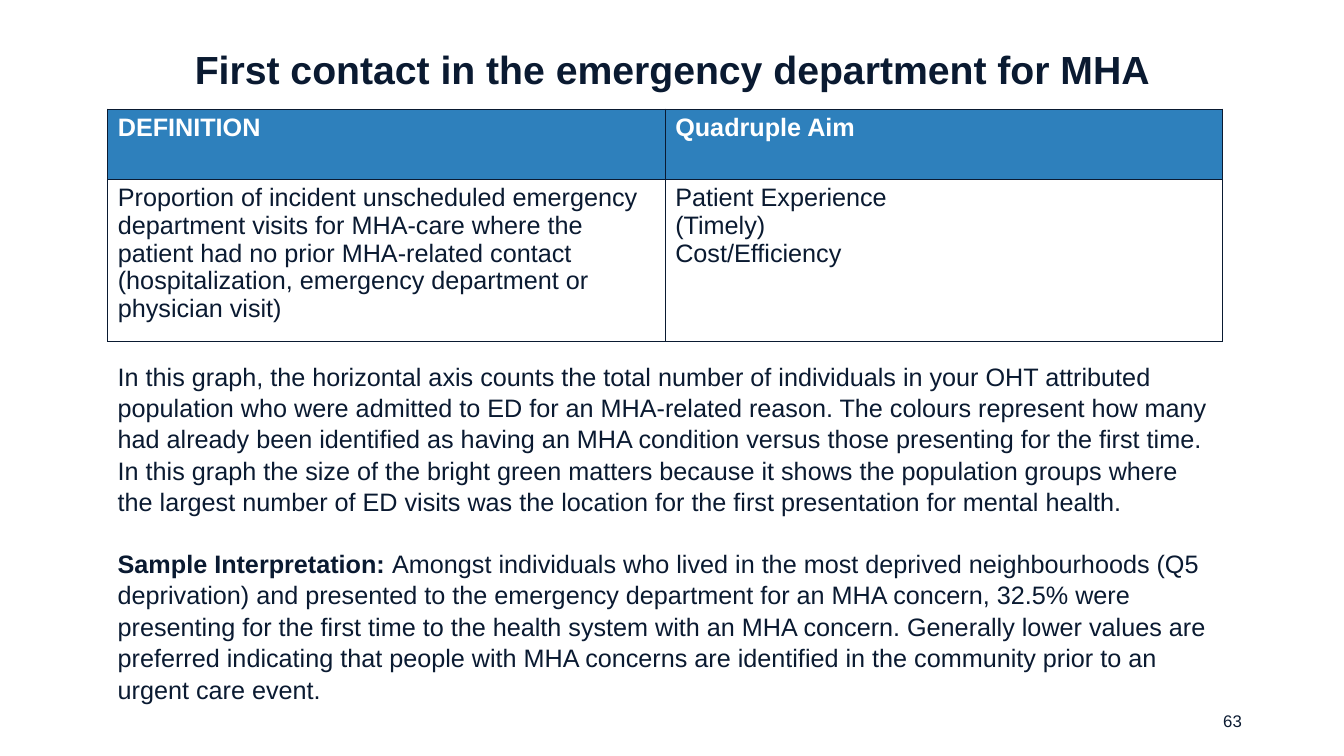
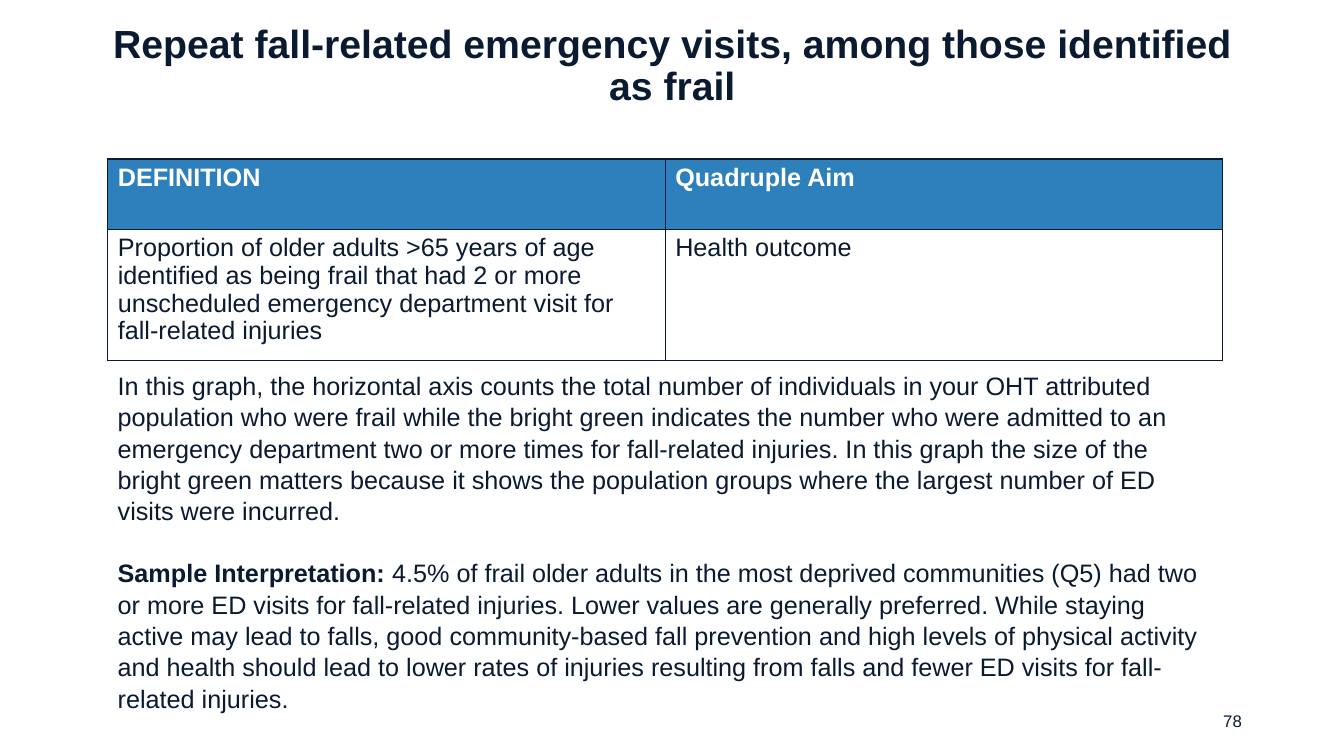
from lxml import etree
from pptx import Presentation
from pptx.dml.color import RGBColor
from pptx.enum.text import MSO_ANCHOR, MSO_AUTO_SIZE, PP_ALIGN
from pptx.oxml.ns import qn
from pptx.util import Pt

MIDDLE = MSO_ANCHOR.MIDDLE
TOP = MSO_ANCHOR.TOP
LEFT = PP_ALIGN.LEFT
CENTER = PP_ALIGN.CENTER
RIGHT = PP_ALIGN.RIGHT
GROW = MSO_AUTO_SIZE.SHAPE_TO_FIT_TEXT

FONT = "Arial"
NAVY = "0A1A31"
BLUE = "2E80BC"
WHITE = "FFFFFF"
TITLE_SIZE = 28
BODY_SIZE = 18
NUMBER_SIZE = 12
CONTENT_LEFT = 77
CONTENT_WIDTH = 796.4
HEADER_HEIGHT = 50.4
HEADINGS = ["DEFINITION", "Quadruple Aim"]
SAMPLE_LABEL = "Sample Interpretation: "

MEASURES = [
    {
        "title": "First contact in the emergency department for MHA",
        "title_top": 20.9,
        "table_top": 78,
        "row_height": 115.6,
        "definition": "Proportion of incident unscheduled emergency department visits for "
                      "MHA-care where the patient had no prior MHA-related contact "
                      "(hospitalization, emergency department or physician visit)",
        "aims": ["Patient Experience", "(Timely)", "Cost/Efficiency"],
        "body_top": 253.4,
        "reading": "In this graph, the horizontal axis counts the total number of individuals "
                   "in your OHT attributed population who were admitted to ED for an "
                   "MHA-related reason. The colours represent how many had already been "
                   "identified as having an MHA condition versus those presenting for the "
                   "first time. In this graph the size of the bright green matters because it "
                   "shows the population groups where the largest number of ED visits was the "
                   "location for the first presentation for mental health.",
        "sample": "Amongst individuals who lived in the most deprived neighbourhoods (Q5 "
                  "deprivation) and presented to the emergency department for an MHA concern, "
                  "32.5% were presenting for the first time to the health system with an MHA "
                  "concern. Generally lower values are preferred indicating that people with "
                  "MHA concerns are identified in the community prior to an urgent care event.",
        "number": "63",
    },
    {
        "title": "Repeat fall-related emergency visits, among those identified as frail",
        "title_top": 17.3,
        "table_top": 113.6,
        "row_height": 93.6,
        "definition": "Proportion of older adults >65 years of age identified as being frail "
                      "that had 2 or more unscheduled emergency department visit for "
                      "fall-related injuries",
        "aims": ["Health outcome"],
        "body_top": 259.9,
        "reading": "In this graph, the horizontal axis counts the total number of individuals "
                   "in your OHT attributed population who were frail while the bright green "
                   "indicates the number who were admitted to an emergency department two or "
                   "more times for fall-related injuries. In this graph the size of "
                   "the bright green matters because it shows the population groups where "
                   "the largest number of ED visits were incurred.",
        "sample": "4.5% of frail older adults in the most deprived communities (Q5) had two or "
                  "more ED visits for fall-related injuries. Lower values are generally "
                  "preferred. While staying active may lead to falls, good community-based "
                  "fall prevention and high levels of physical activity and health should lead "
                  "to lower rates of injuries resulting from falls and fewer ED visits for "
                  "fall-related injuries.",
        "number": "78",
    },
]


def color(hex_string):
    return RGBColor.from_string(hex_string)


def style_font(font, size, hex_string, bold=False):
    font.name = FONT
    font.size = Pt(size)
    font.bold = bold
    font.color.rgb = color(hex_string)


def add_text(slide, box, paragraphs, size, bold=False, align=LEFT, anchor=TOP, spacing=1.0):
    shape = slide.shapes.add_textbox(*map(Pt, box))
    frame = shape.text_frame
    frame.word_wrap = True
    frame.vertical_anchor = anchor
    frame.text = "\n".join(paragraphs)
    for paragraph in frame.paragraphs:
        paragraph.alignment = align
        paragraph.line_spacing = spacing
        for run in paragraph.runs:
            style_font(run.font, size, NAVY, bold)
    return frame


def add_title(slide, box, title):
    add_text(slide, box, [title], TITLE_SIZE, True, CENTER, MIDDLE, 0.9)


def add_slide_number(slide, box, number):
    add_text(slide, box, [number], NUMBER_SIZE, align=RIGHT, anchor=MIDDLE)


def add_explanation(slide, box, reading, sample):
    frame = add_text(slide, box, [reading, SAMPLE_LABEL], BODY_SIZE, spacing=1.04)
    frame.auto_size = GROW
    paragraph = frame.paragraphs[1]
    paragraph.space_before = Pt(21.6)
    paragraph.runs[0].font.bold = True
    run = paragraph.add_run()
    run.text = sample
    style_font(run.font, BODY_SIZE, NAVY)


def add_borders(cell):
    properties = cell._tc.get_or_add_tcPr()
    for side in ("lnL", "lnR", "lnT", "lnB"):
        line = etree.SubElement(properties, qn(f"a:{side}"), w=str(Pt(1)))
        fill = etree.SubElement(line, qn("a:solidFill"))
        etree.SubElement(fill, qn("a:srgbClr"), val=NAVY)


def fill_cell(cell, text, is_heading):
    add_borders(cell)
    if is_heading:
        cell.fill.solid()
        cell.fill.fore_color.rgb = color(BLUE)
    else:
        cell.fill.background()
    cell.text_frame.text = text
    for paragraph in cell.text_frame.paragraphs:
        paragraph.line_spacing = 0.98
        for run in paragraph.runs:
            style_font(run.font, BODY_SIZE, WHITE if is_heading else NAVY, is_heading)


def add_definition_table(slide, box, definition, aims):
    left, top, width, height = box
    rows = [HEADINGS, [definition, "\n".join(aims)]]
    table = slide.shapes.add_table(2, 2, *map(Pt, box)).table
    for column in table.columns:
        column.width = Pt(width / 2)
    for row, row_height in zip(table.rows, (HEADER_HEIGHT, height - HEADER_HEIGHT)):
        row.height = Pt(row_height)
    for row_index, texts in enumerate(rows):
        for column_index, text in enumerate(texts):
            fill_cell(table.cell(row_index, column_index), text, row_index == 0)


def add_measure_slide(presentation, measure):
    slide = presentation.slides.add_slide(presentation.slide_layouts[6])
    add_slide_number(slide, (678.2, 500.4, 216, 28.8), measure["number"])
    add_title(slide, (55.4, measure["title_top"], 849.6, 60.5), measure["title"])
    table_height = HEADER_HEIGHT + measure["row_height"]
    table_box = (CONTENT_LEFT, measure["table_top"], CONTENT_WIDTH, table_height)
    add_definition_table(slide, table_box, measure["definition"], measure["aims"])
    body_box = (CONTENT_LEFT, measure["body_top"], CONTENT_WIDTH, 247)
    add_explanation(slide, body_box, measure["reading"], measure["sample"])


def main():
    presentation = Presentation()
    presentation.slide_width = Pt(960)
    presentation.slide_height = Pt(540)
    for measure in MEASURES:
        add_measure_slide(presentation, measure)
    presentation.save("out.pptx")


if __name__ == "__main__":
    main()
